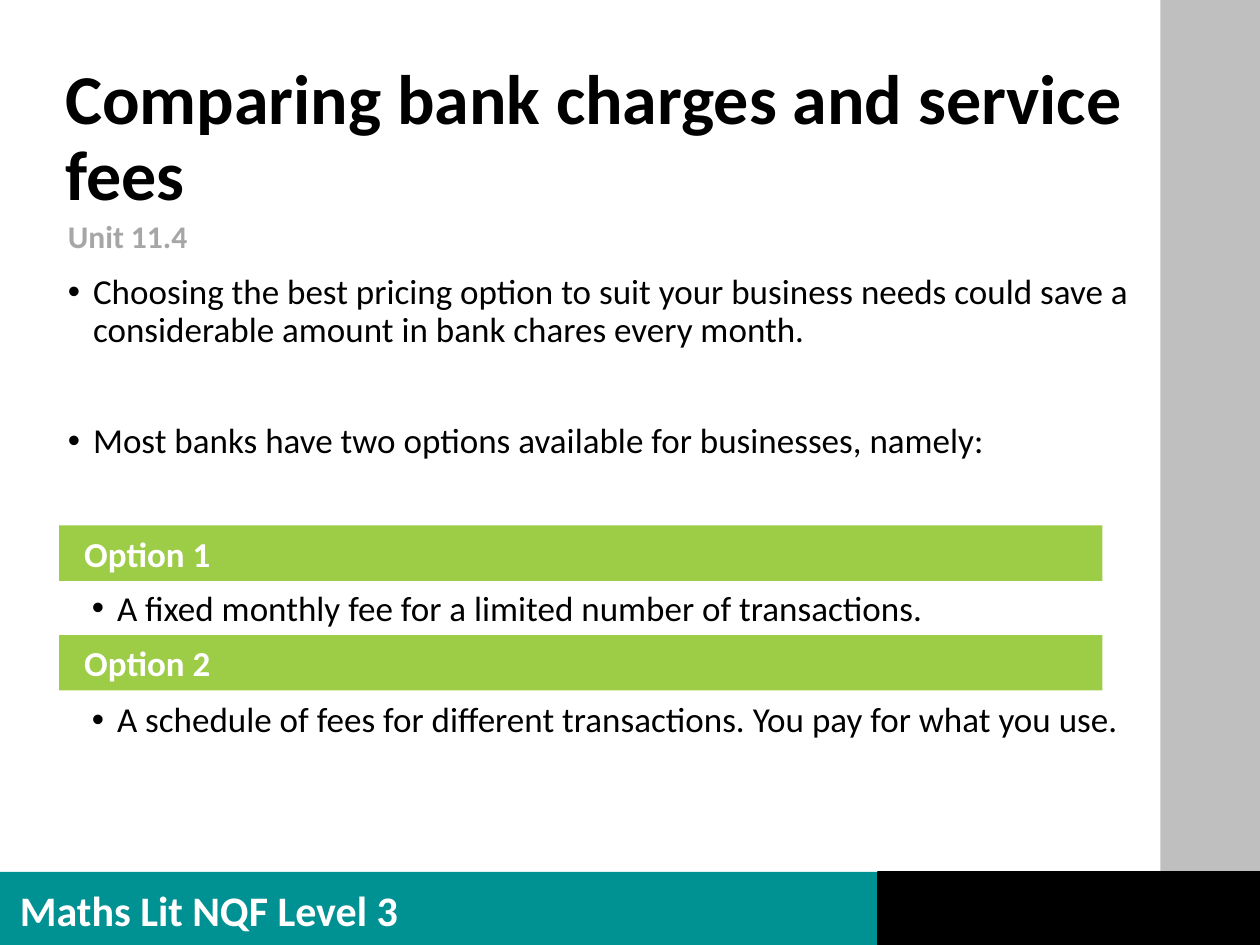
from dataclasses import dataclass

from lxml.etree import SubElement
from pptx import Presentation
from pptx.dml.color import RGBColor
from pptx.enum.shapes import MSO_SHAPE as Shape
from pptx.enum.text import MSO_ANCHOR as Anchor, PP_ALIGN as Align
from pptx.oxml.ns import qn
from pptx.util import Inches, Pt


@dataclass(frozen=True)
class Theme:
    font: str = "Calibri"
    black: str = "000000"
    white: str = "FFFFFF"
    side_grey: str = "BFBFBF"
    unit_grey: str = "A6A6A6"
    teal: str = "009193"
    green: str = "9DCC47"
    title_size: int = 40
    footer_size: int = 24
    body_size: int = 20
    unit_size: int = 18
    line_spacing: float = 0.9


@dataclass(frozen=True)
class Box:
    left: float
    top: float
    width: float
    height: float

    def emu(self) -> tuple:
        return tuple(Inches(v) for v in (self.left, self.top, self.width, self.height))


@dataclass(frozen=True)
class Style:
    size: int
    color: str
    bold: bool = True
    line_spacing: float = 1.0


@dataclass(frozen=True)
class Bullet:
    text: str
    indent: float = 0.2
    space_before: int = 0


THEME = Theme()
HANGING = 0.2

# Gaps between bullets leave room for the option bars
BULLETS = [
    Bullet("Choosing the best pricing option to suit your business needs could save a "
           "considerable amount in bank chares every month."),
    Bullet("Most banks have two options available for businesses, namely:", space_before=42),
    Bullet("A fixed monthly fee for a limited number of transactions.", 0.39, 74),
    Bullet("A schedule of fees for different transactions. You pay for what you use.", 0.39, 42),
]
OPTIONS = ["Option 1", "Option 2"]
OPTION_TOP, OPTION_STEP = 4.17, 0.87


def add_bar(slide, box: Box, fill: str, outline: str = ""):
    bar = slide.shapes.add_shape(Shape.RECTANGLE, *box.emu())
    bar.shadow.inherit = False
    bar.fill.solid()
    bar.fill.fore_color.rgb = RGBColor.from_string(fill)
    if outline:
        bar.line.color.rgb = RGBColor.from_string(outline)
        bar.line.width = Pt(1)
    else:
        bar.line.fill.background()
    return bar


def add_frame(slide, box: Box):
    frame = slide.shapes.add_textbox(*box.emu()).text_frame
    frame.word_wrap = True
    frame.vertical_anchor = Anchor.TOP
    return frame


def write(paragraph, text: str, style: Style) -> None:
    paragraph.alignment = Align.LEFT
    paragraph.line_spacing = style.line_spacing
    run = paragraph.add_run()
    run.text = text
    run.font.name = THEME.font
    run.font.size = Pt(style.size)
    run.font.bold = style.bold
    run.font.color.rgb = RGBColor.from_string(style.color)


def add_label(slide, box: Box, text: str, style: Style) -> None:
    write(add_frame(slide, box).paragraphs[0], text, style)


def add_bullets(slide, box: Box, bullets: list[Bullet], style: Style) -> None:
    frame = add_frame(slide, box)
    for index, bullet in enumerate(bullets):
        paragraph = frame.add_paragraph() if index else frame.paragraphs[0]
        properties = paragraph._p.get_or_add_pPr()
        properties.set("marL", str(Inches(bullet.indent)))
        properties.set("indent", str(-Inches(HANGING)))
        SubElement(properties, qn("a:buFont"), typeface="Arial")
        SubElement(properties, qn("a:buChar"), char="•")
        if bullet.space_before:
            paragraph.space_before = Pt(bullet.space_before)
        write(paragraph, bullet.text, style)


def add_option(slide, box: Box, text: str, style: Style) -> None:
    frame = add_bar(slide, box, THEME.green).text_frame
    frame.word_wrap = True
    frame.vertical_anchor = Anchor.MIDDLE
    paragraph = frame.paragraphs[0]
    paragraph._p.get_or_add_pPr().set("marL", str(Inches(0.1)))
    write(paragraph, text, style)


def main() -> None:
    deck = Presentation()
    deck.slide_width, deck.slide_height = Inches(10), Inches(7.5)
    slide = deck.slides.add_slide(deck.slide_layouts[6])

    # Side panel and footer
    add_bar(slide, Box(9.21, 0, 0.79, 7.49), THEME.side_grey)
    add_bar(slide, Box(0, 6.92, 10, 0.59), THEME.teal)
    add_bar(slide, Box(6.97, 6.92, 3.03, 0.58), THEME.black, THEME.black)
    add_label(slide, Box(0.06, 6.97, 3.75, 0.5), "Maths Lit NQF Level 3",
              Style(THEME.footer_size, THEME.white))

    # Title, bullets and unit number
    spacing = THEME.line_spacing
    add_label(slide, Box(0.42, 0.46, 8.65, 0.79), "Comparing bank charges and service fees",
              Style(THEME.title_size, THEME.black, line_spacing=spacing))
    add_bullets(slide, Box(0.44, 2.13, 8.65, 4.52), BULLETS,
                Style(THEME.body_size, THEME.black, False, spacing))
    add_label(slide, Box(0.44, 1.71, 8.65, 0.33), "Unit 11.4",
              Style(THEME.unit_size, THEME.unit_grey, line_spacing=spacing))

    # Option bars
    for index, option in enumerate(OPTIONS):
        add_option(slide, Box(0.47, OPTION_TOP + index * OPTION_STEP, 8.28, 0.44), option,
                   Style(THEME.body_size, THEME.white))

    deck.save("out.pptx")


if __name__ == "__main__":
    main()
